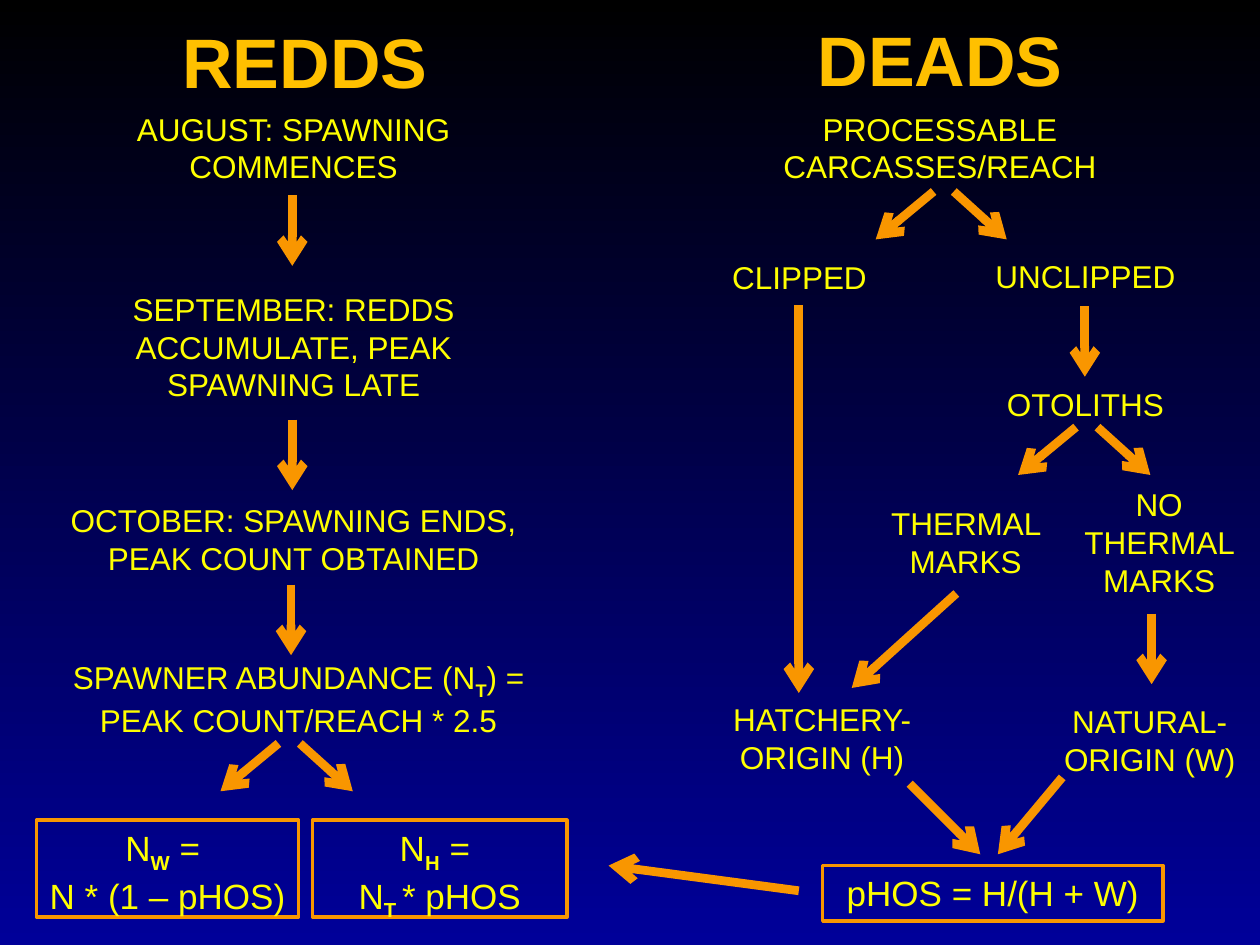
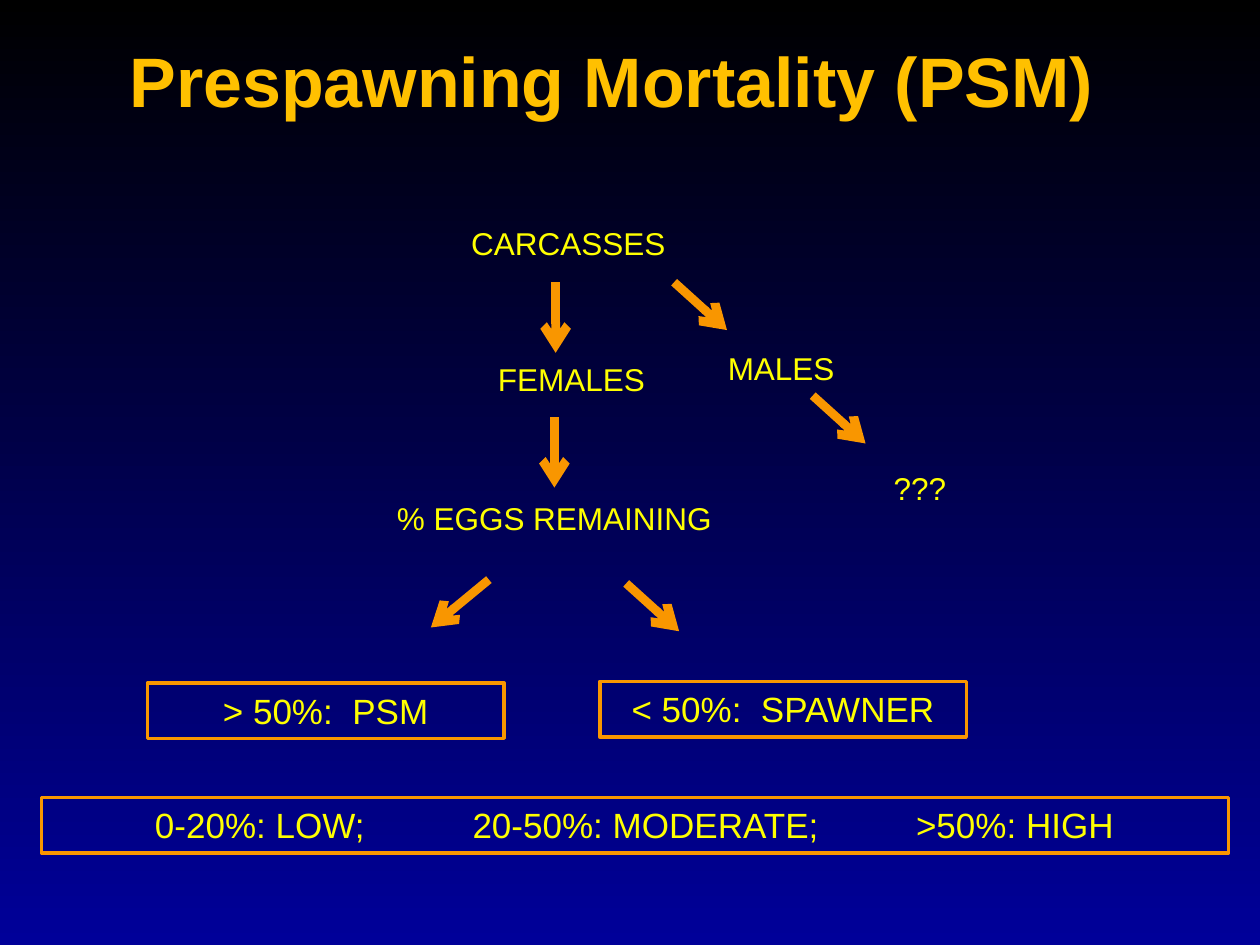
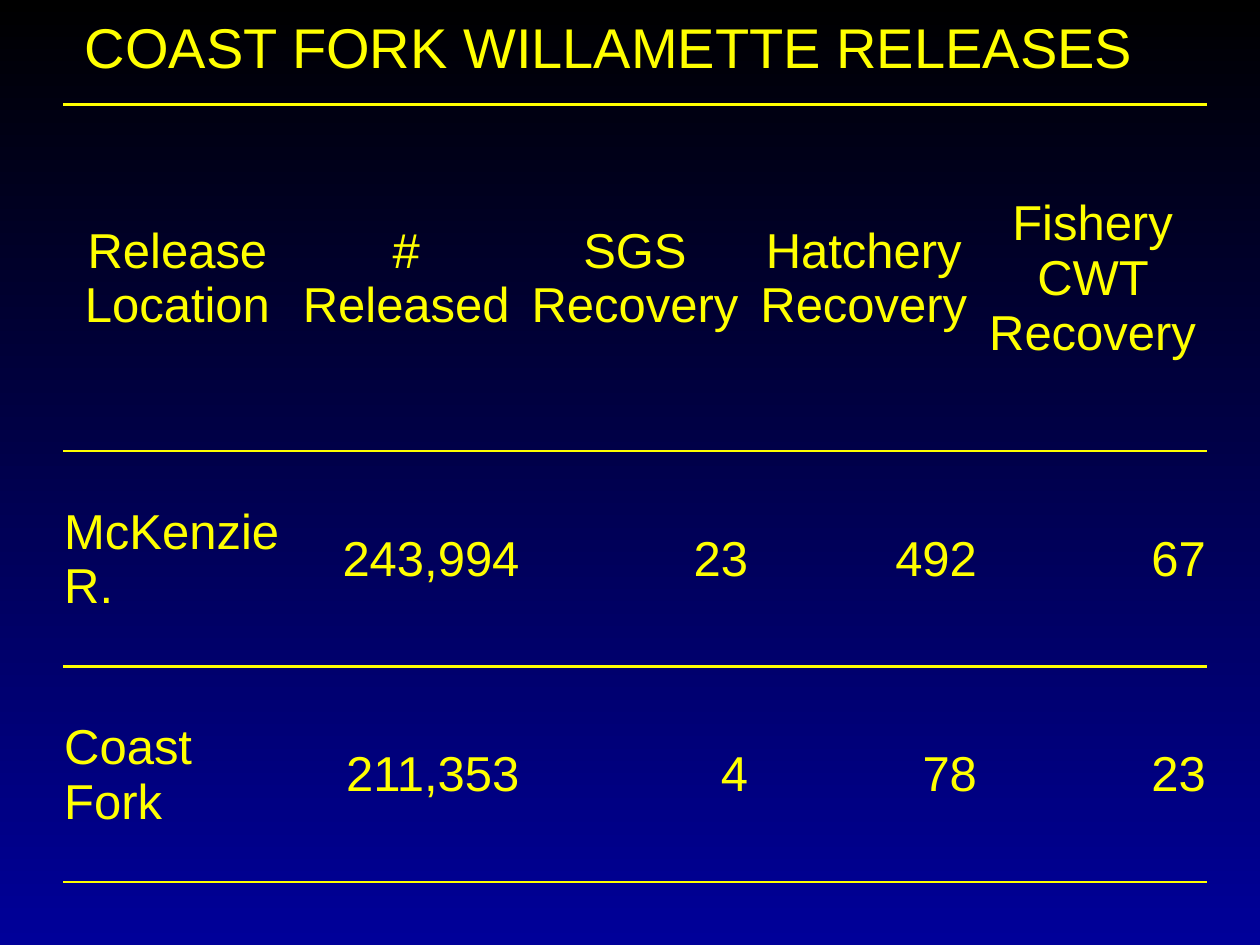
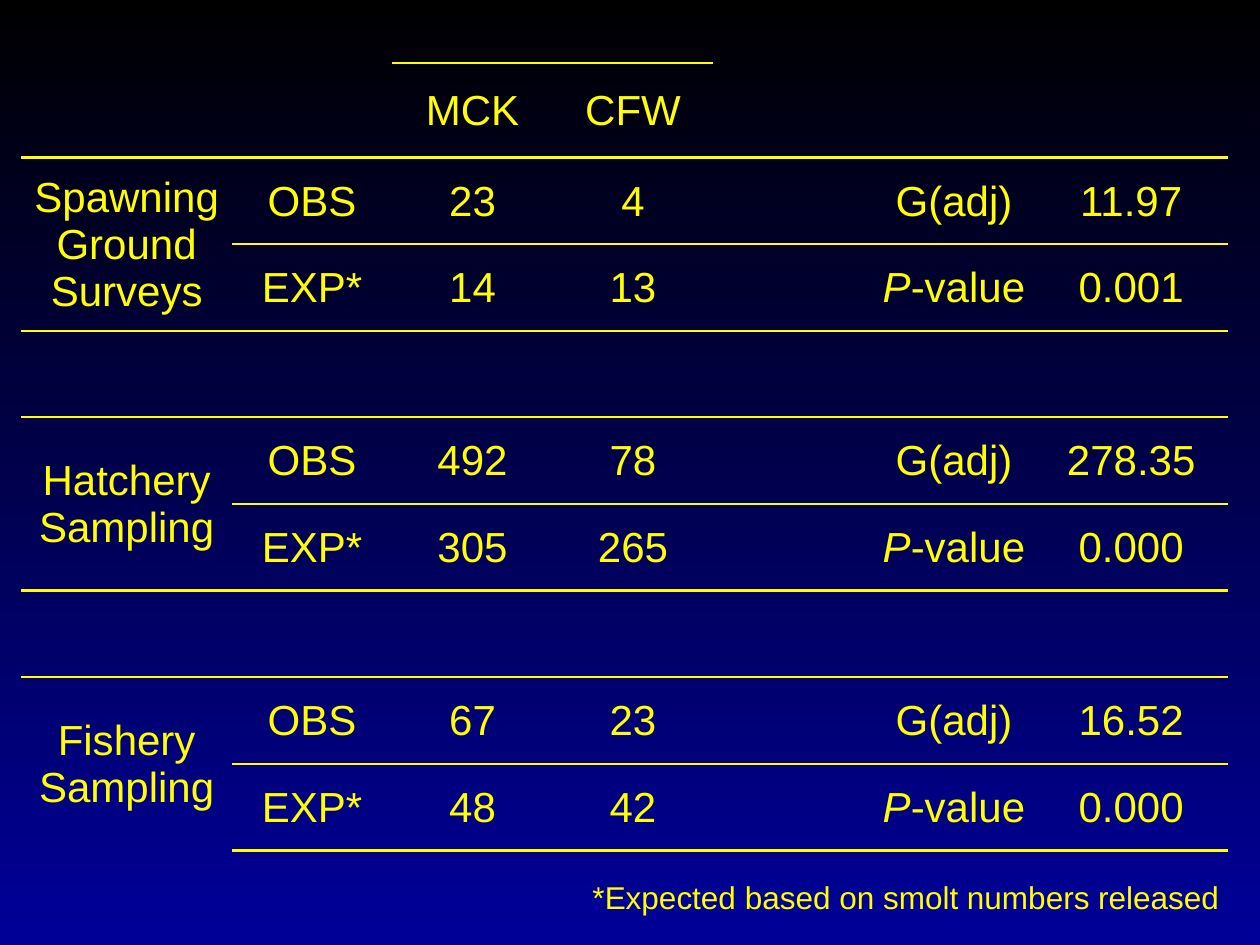
from lxml.etree import SubElement
from pptx import Presentation
from pptx.dml.color import RGBColor
from pptx.enum.shapes import MSO_CONNECTOR as Connector, MSO_SHAPE as Preset
from pptx.enum.text import MSO_ANCHOR as Anchor, MSO_AUTO_SIZE as AutoSize, PP_ALIGN as Align
from pptx.oxml.ns import qn
from pptx.util import Inches, Pt

BLACK = RGBColor(0x00, 0x00, 0x00)
NAVY = RGBColor(0x00, 0x00, 0x99)
YELLOW = RGBColor(0xFF, 0xFF, 0x00)
GOLD = RGBColor(0xFF, 0xC0, 0x00)
ORANGE = RGBColor(0xF9, 0x96, 0x00)
FONT = "Arial"
COLUMNS, ROWS = 10, 7.5
NO_TABLE_STYLE = "{2D5ABB26-0587-4C30-8999-92F81FD0307C}"

DOWN = (0, 0.56)
DOWN_LEFT = (-0.46, 0.38)
DOWN_RIGHT = (0.42, 0.38)


def units(*counts):
    return [Inches(count) for count in counts]


def paint_background(master):
    fill = master.background.fill
    fill.gradient()
    fill.gradient_angle = 270
    for stop, color in zip(fill.gradient_stops, (BLACK, NAVY)):
        stop.color.rgb = color


def subscript(span):
    span.font.bold = True
    span._r.get_or_add_rPr().set("baseline", "-25000")


def italic(span):
    span.font.italic = True


def write(frame, text, size, color=YELLOW, bold=None, align=Align.CENTER, accent=subscript):
    """Fill a frame line by line; pieces between underscores get the accent."""
    for number, line in enumerate(text.split("\n")):
        para = frame.add_paragraph() if number else frame.paragraphs[0]
        para.alignment = align
        font = para.font
        font.name, font.size, font.bold = FONT, Pt(size), bold
        font.color.rgb = color
        for index, piece in enumerate(line.split("_")):
            if piece:
                span = para.add_run()
                span.text = piece
                if index % 2:
                    accent(span)


def add_label(page, place, text, size=18, wrap=True, **style):
    frame = page.shapes.add_textbox(*units(*place)).text_frame
    frame.word_wrap = wrap
    frame.auto_size = AutoSize.SHAPE_TO_FIT_TEXT
    write(frame, text, size, **style)


def add_title(page, place, text):
    add_label(page, place, text, size=40, color=GOLD, bold=True, align=Align.LEFT)


def add_result(page, place, text, **style):
    box = page.shapes.add_shape(Preset.RECTANGLE, *units(*place))
    box.shadow.inherit = False
    box.fill.background()
    box.line.color.rgb = ORANGE
    box.line.width = Pt(2)
    frame = box.text_frame
    frame.word_wrap = True
    frame.auto_size = AutoSize.SHAPE_TO_FIT_TEXT
    frame.vertical_anchor = Anchor.TOP
    write(frame, text, 20, **style)
    return frame


def set_tabs(para, *stops):
    tabs = SubElement(para._p.get_or_add_pPr(), qn("a:tabLst"))
    para._p.pPr.insert(0, tabs)
    for stop in stops:
        SubElement(tabs, qn("a:tab"), pos=str(Inches(stop)), algn="l")


def add_arrow(page, start, move):
    end = [point + step for point, step in zip(start, move)]
    arrow = page.shapes.add_connector(Connector.STRAIGHT, *units(*start, *end))
    arrow.line.color.rgb = ORANGE
    arrow.line.width = Pt(5)
    properties = arrow._element.spPr
    SubElement(properties.find(qn("a:ln")), qn("a:tailEnd"), type="arrow")
    SubElement(properties, qn("a:effectLst"))


def add_arrows(page, move, starts):
    for start in starts:
        add_arrow(page, start, move)


def rule_cell(cell, tags):
    properties = cell._tc.get_or_add_tcPr()
    for index, tag in enumerate(tags):
        line = SubElement(properties, qn(tag), w=str(Pt(1.5)))
        fill = SubElement(line, qn("a:solidFill"))
        SubElement(fill, qn("a:srgbClr"), val=str(YELLOW))
        properties.insert(index, line)


def add_ruled_table(page, corner, widths, heights, rows, size, rules, align):
    """Rules map a row boundary to the columns that it crosses."""
    place = units(*corner, sum(widths), sum(heights))
    table = page.shapes.add_table(len(heights), len(widths), *place).table
    table.first_row = table.horz_banding = False
    table._tbl.tblPr.find(qn("a:tableStyleId")).text = NO_TABLE_STYLE
    for column, width in zip(table.columns, widths):
        column.width = Inches(width)
    for row, height in zip(table.rows, heights):
        row.height = Inches(height)
    for r, texts in enumerate(rows):
        for c, text in enumerate(texts):
            cell = table.cell(r, c)
            cell.fill.background()
            cell.vertical_anchor = Anchor.MIDDLE
            cell.margin_left = cell.margin_right = cell.margin_top = Inches(0.01)
            cell.margin_bottom = 0
            if text:
                write(cell.text_frame, text, size, align=align(r, c), accent=italic)
            edges = (("a:lnT", r), ("a:lnB", r + 1))
            rule_cell(cell, [tag for tag, edge in edges if c in rules.get(edge, ())])
    return table


def build_redds_and_deads(page):
    add_title(page, (1.35, 0.1, 2.25, 0.77), "REDDS")
    add_title(page, (6.39, 0.08, 2.49, 0.77), "DEADS")

    for left, top, height, text in (
        (0.29, 0.82, 0.71, "AUGUST: SPAWNING COMMENCES"),
        (0.29, 2.25, 1.01, "SEPTEMBER: REDDS ACCUMULATE, PEAK SPAWNING LATE"),
        (0.29, 3.93, 0.78, "OCTOBER: SPAWNING ENDS, PEAK COUNT OBTAINED"),
        (0.33, 5.17, 0.71, "SPAWNER ABUNDANCE (N_T_) = PEAK COUNT/REACH * 2.5"),
    ):
        add_label(page, (left, top, 4.08, height), text)

    add_label(page, (6, 0.82, 2.92, 0.71), "PROCESSABLE CARCASSES/REACH")
    add_label(page, (8.48, 3.8, 1.44, 1.01), "NO THERMAL MARKS")
    for left, top, height, text in (
        (5.51, 2, 0.42, "CLIPPED"),
        (7.78, 1.99, 0.42, "UNCLIPPED"),
        (7.78, 3.01, 0.42, "OTOLITHS"),
        (6.83, 3.95, 0.71, "THERMAL MARKS"),
        (5.69, 5.51, 0.71, "HATCHERY-ORIGIN (H)"),
        (8.29, 5.52, 0.71, "NATURAL-ORIGIN (W)"),
    ):
        add_label(page, (left, top, 1.67, height), text)

    add_arrows(page, DOWN, ((2.32, 1.55), (2.32, 3.33), (2.31, 4.64), (8.61, 2.43), (9.14, 4.87)))
    add_arrows(page, DOWN_LEFT, ((2.21, 5.9), (7.41, 1.52), (8.54, 3.39)))
    add_arrows(page, DOWN_RIGHT, ((2.38, 5.9), (7.57, 1.52), (8.71, 3.39)))
    add_arrow(page, (6.34, 2.42), (0, 3.08))
    add_arrow(page, (7.59, 4.71), (-0.83, 0.75))
    add_arrow(page, (7.22, 6.22), (0.56, 0.56))
    add_arrow(page, (8.43, 6.17), (-0.51, 0.61))
    add_arrow(page, (6.34, 7.07), (-1.51, -0.2))

    add_result(page, (0.29, 6.51, 2.08, 0.77), "N_W_ = \nN * (1 – pHOS)")
    add_result(page, (2.48, 6.51, 2.02, 0.77), "N_H_ = \nN_T _* pHOS")
    add_result(page, (6.53, 6.87, 2.7, 0.44), "pHOS = H/(H + W)")


def build_mortality(page):
    add_title(page, (0.93, 0.25, 8.5, 0.77), "Prespawning Mortality (PSM)")
    for left, top, width, text in (
        (2.47, 1.73, 4.08, "CARCASSES"),
        (3.83, 2.81, 1.41, "FEMALES"),
        (5.56, 2.72, 1.28, "MALES"),
        (6.66, 3.67, 1.28, "???"),
        (2.36, 3.91, 4.08, "% EGGS REMAINING"),
    ):
        add_label(page, (left, top, width, 0.4), text)

    add_arrows(page, DOWN, ((4.41, 2.24), (4.4, 3.31)))
    add_arrows(page, DOWN_LEFT, ((3.88, 4.6),))
    add_arrows(page, DOWN_RIGHT, ((5.35, 2.24), (6.45, 3.14), (4.97, 4.63)))

    add_result(page, (1.17, 5.42, 2.83, 0.44), "> 50%:  PSM")
    add_result(page, (4.76, 5.41, 2.91, 0.44), "< 50%:  SPAWNER")
    levels = "0-20%: LOW;\t20-50%: MODERATE;\t>50%: HIGH"
    scale = add_result(page, (0.33, 6.33, 9.42, 0.44), levels, align=Align.LEFT)
    scale.margin_left = Inches(0.9)
    set_tabs(scale.paragraphs[0], 2.52, 6.04)


def build_releases(page):
    title = "COAST FORK WILLAMETTE RELEASES"
    add_label(page, (0.5, 0.05, 8.67, 0.64), title, size=32)
    rows = (
        ("Release Location", "# Released", "SGS Recovery", "Hatchery Recovery",
         "Fishery CWT Recovery"),
        ("McKenzie R.", "243,994", "23", "492", "67"),
        ("Coast Fork", "211,353", "4", "78", "23"),
    )

    def align(row, column):
        if row == 0:
            return Align.CENTER
        return Align.RIGHT if column else Align.LEFT

    add_ruled_table(page, (0.5, 0.83), [9.08 / 5] * 5, [2.75, 1.71, 1.71], rows, 28,
                    {boundary: range(5) for boundary in (0, 1, 3)}, align)


def build_tests(page):
    surveys = (
        ("Spawning Ground Surveys", ("23", "4"), ("14", "13"), "11.97", "0.001"),
        ("Hatchery Sampling", ("492", "78"), ("305", "265"), "278.35", "0.000"),
        ("Fishery Sampling", ("67", "23"), ("48", "42"), "16.52", "0.000"),
    )
    blank = ("",) * 7
    rows = [("", "", "MCK", "CFW", "", "", "")]
    rules = {0: (2, 3)}
    first_rows = []
    for name, observed, expected, statistic, chance in surveys:
        if first_rows:
            rows.append(blank)
        first = len(rows)
        first_rows.append(first)
        rows.append((name, "OBS", *observed, "", "G(adj)", statistic))
        rows.append(("", "EXP*", *expected, "", "_P_-value", chance))
        rules[first] = rules[first + 2] = range(7)

    widths = [1.67] + [(9.58 - 1.67 - 1.54) / 5] * 5 + [1.54]
    heights = [0.75] + [5.5 / 8] * 8
    table = add_ruled_table(page, (0.17, 0.5), widths, heights, rows, 24, rules,
                            lambda row, column: Align.CENTER)
    for first in first_rows:
        table.cell(first, 0).merge(table.cell(first + 1, 0))
    add_label(page, (4.58, 6.92, 5.22, 0.4), "*Expected based on smolt numbers released", wrap=False)


def main():
    deck = Presentation()
    deck.slide_width, deck.slide_height = units(COLUMNS, ROWS)
    paint_background(deck.slide_master)
    for build in (build_redds_and_deads, build_mortality, build_releases, build_tests):
        build(deck.slides.add_slide(deck.slide_layouts[6]))
    deck.save("out.pptx")


if __name__ == "__main__":
    main()
